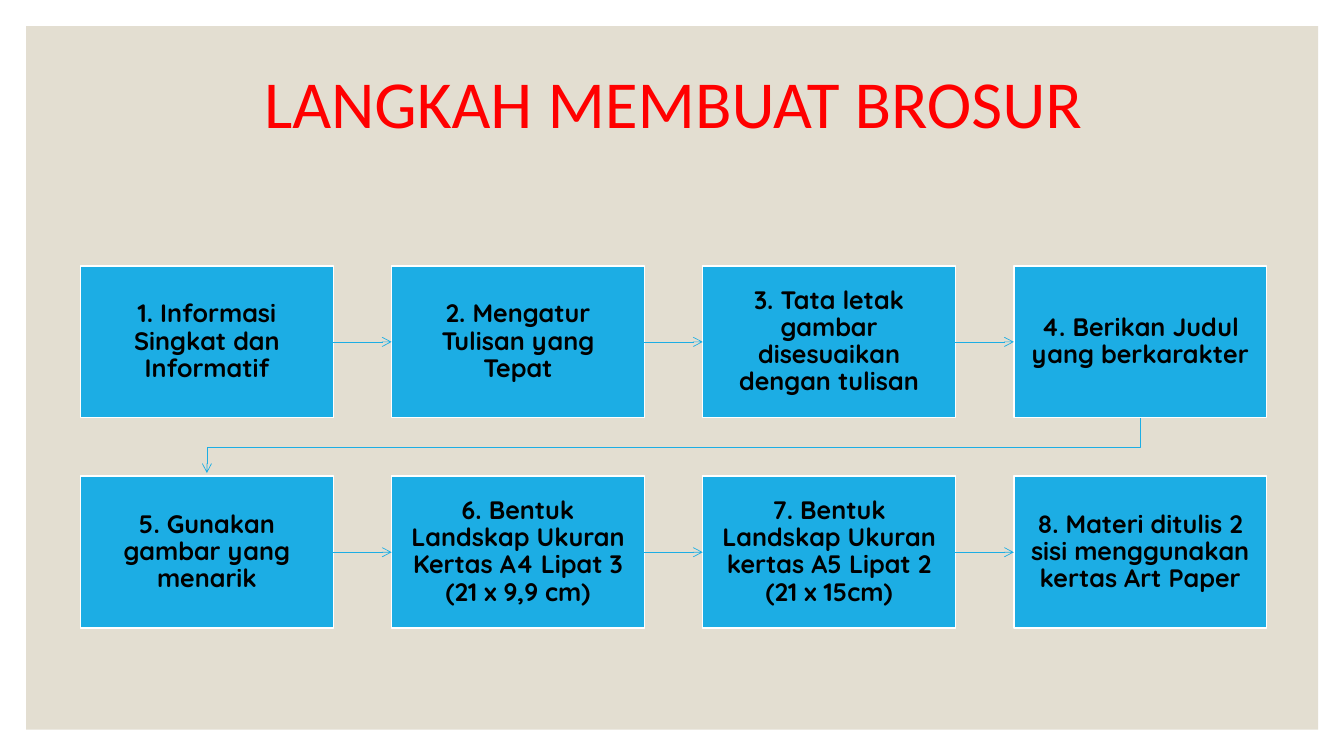
"""Build the slide of eight steps for making a brochure."""
from dataclasses import dataclass

from lxml.etree import SubElement
from pptx import Presentation
from pptx.dml.color import RGBColor
from pptx.enum.shapes import MSO_CONNECTOR, MSO_SHAPE
from pptx.enum.text import MSO_ANCHOR, PP_ALIGN
from pptx.oxml.ns import qn
from pptx.util import Cm, Pt


@dataclass(frozen=True)
class Theme:
    """Colours, fonts and type sizes of the slide."""
    panel: RGBColor = RGBColor(0xE3, 0xDE, 0xD1)
    accent: RGBColor = RGBColor(0x1C, 0xAD, 0xE4)
    edge: RGBColor = RGBColor(0xFF, 0xFF, 0xFF)
    title: RGBColor = RGBColor(0xFF, 0x00, 0x00)
    text: RGBColor = RGBColor(0x00, 0x00, 0x00)
    title_font: str = "Calibri"
    step_font: str = "Quicksand"
    title_size: Pt = Pt(48)
    step_size: Pt = Pt(18)


def write_text(shape, text, margin, font_format):
    """Fill a shape with one centred paragraph."""
    frame = shape.text_frame
    frame_format = {
        "word_wrap": True, "vertical_anchor": MSO_ANCHOR.MIDDLE,
        "margin_left": margin, "margin_right": margin,
        "margin_top": margin, "margin_bottom": margin,
    }
    for name, value in frame_format.items():
        setattr(frame, name, value)
    para = frame.paragraphs[0]
    para.alignment = PP_ALIGN.CENTER
    para.line_spacing = 0.9
    span = para.add_run()
    span.text = text
    for name, value in font_format.items():
        setattr(span.font, name, value)
    span.font.color.rgb = theme.title if shape is title else theme.text


def style_arrow(arrow):
    """Give a line its colour, width and open arrowhead."""
    arrow.line.color.rgb = theme.accent
    arrow.line.width = Pt(0.5)
    properties = arrow.element.spPr
    SubElement(properties.find(qn("a:ln")), qn("a:tailEnd"), type="arrow")
    if properties.find(qn("a:effectLst")) is None:
        SubElement(properties, qn("a:effectLst"))


theme = Theme()
steps = [
    "1. Informasi Singkat dan Informatif",
    "2. Mengatur Tulisan yang Tepat",
    "3. Tata letak gambar disesuaikan dengan tulisan",
    "4. Berikan Judul yang berkarakter",
    "5. Gunakan gambar yang menarik",
    "6. Bentuk Landskap Ukuran Kertas A4 Lipat 3 (21 x 9,9 cm)",
    "7. Bentuk Landskap Ukuran kertas A5 Lipat 2 (21 x 15cm)",
    "8. Materi ditulis 2 sisi menggunakan kertas Art Paper",
]
columns = 4
left, top = Cm(2.03), Cm(6.7)
width, height = Cm(6.37), Cm(3.83)
column_pitch, row_pitch = Cm(7.84), Cm(5.3)

deck = Presentation()
deck.slide_width, deck.slide_height = Cm(33.87), Cm(19.05)
page = deck.slides.add_slide(deck.slide_layouts[6])

panel = page.shapes.add_shape(
    MSO_SHAPE.RECTANGLE, Cm(0.66), Cm(0.66), Cm(32.56), Cm(17.73))
panel.shadow.inherit = False
panel.fill.solid()
panel.fill.fore_color.rgb = theme.panel
panel.line.fill.background()

title = page.shapes.add_textbox(Cm(3), Cm(0.79), Cm(27.94), Cm(3.81))
write_text(title, "LANGKAH MEMBUAT BROSUR", Cm(0.25),
           {"name": theme.title_font, "size": theme.title_size})

boxes = []
for index, step in enumerate(steps):
    row, column = divmod(index, columns)
    box = page.shapes.add_shape(
        MSO_SHAPE.RECTANGLE, left + column * column_pitch,
        top + row * row_pitch, width, height)
    box.shadow.inherit = False
    box.fill.solid()
    box.fill.fore_color.rgb = theme.accent
    box.line.color.rgb = theme.edge
    box.line.width = Pt(1)
    write_text(box, step, Cm(0.36),
               {"name": theme.step_font, "size": theme.step_size, "bold": True})
    boxes.append(box)
    if column:
        arrow = page.shapes.add_connector(MSO_CONNECTOR.STRAIGHT, 0, 0, 0, 0)
        arrow.begin_connect(boxes[index - 1], 3)
        arrow.end_connect(box, 1)
        style_arrow(arrow)

row_end, row_start = boxes[columns - 1], boxes[columns]
start_x = row_end.left + width // 2
end_x = row_start.left + width // 2
turn_y = (row_end.top + height + row_start.top) // 2
builder = page.shapes.build_freeform(start_x, row_end.top + height)
builder.add_line_segments(
    [(start_x, turn_y), (end_x, turn_y), (end_x, row_start.top - Cm(0.08))],
    close=False)
return_arrow = builder.convert_to_shape()
return_arrow.fill.background()
style_arrow(return_arrow)

deck.save("out.pptx")
